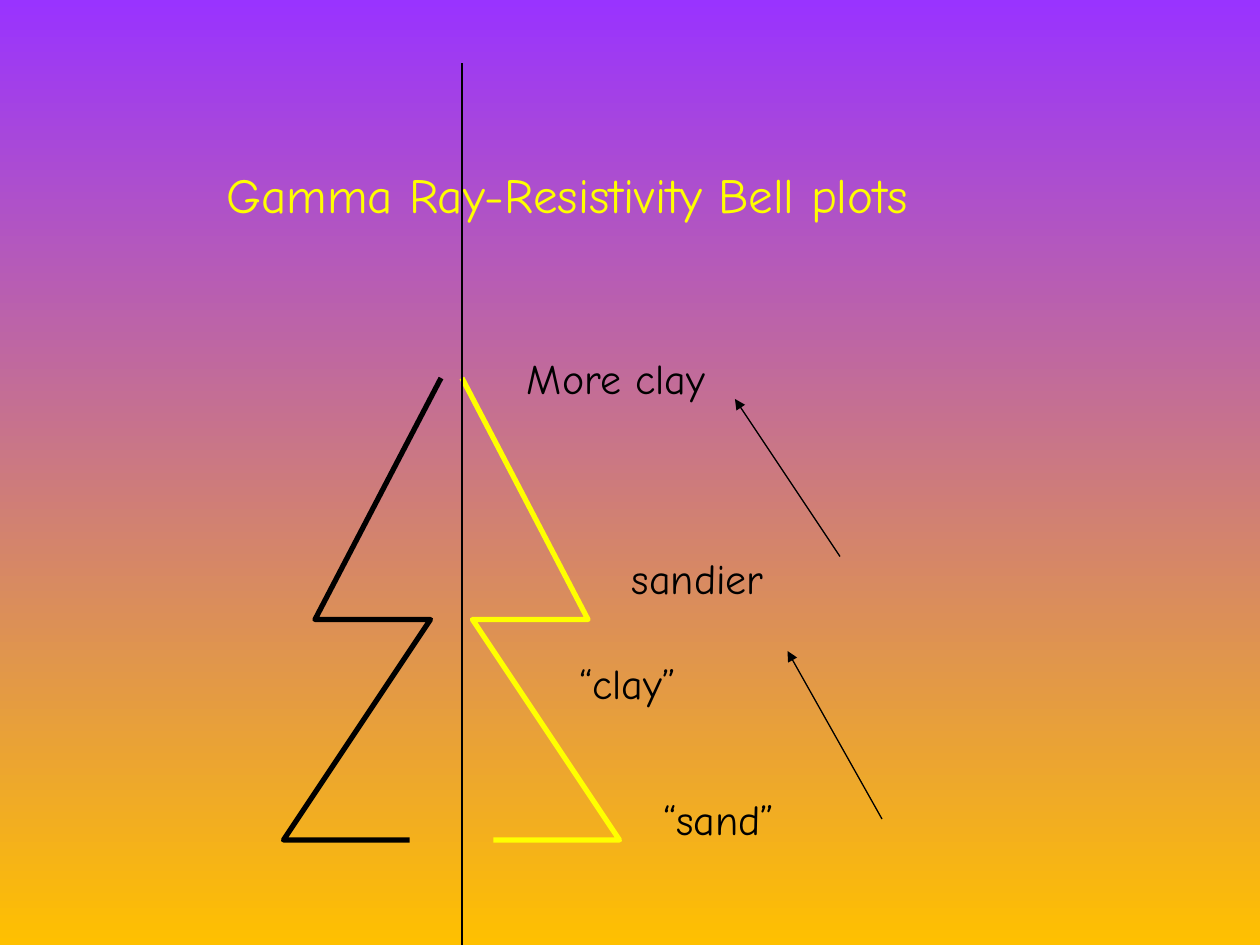
from lxml.etree import SubElement
from pptx import Presentation
from pptx.dml.color import RGBColor
from pptx.enum.shapes import MSO_CONNECTOR
from pptx.enum.text import MSO_ANCHOR, MSO_AUTO_SIZE, PP_ALIGN
from pptx.oxml.ns import qn
from pptx.util import Pt

PURPLE = RGBColor(0x99, 0x33, 0xFF)
AMBER = RGBColor(0xFF, 0xC0, 0x00)
YELLOW = RGBColor(0xFF, 0xFF, 0x00)
BLACK = RGBColor(0x00, 0x00, 0x00)

FONT_NAME = "Comic Neue"
TITLE_FONT = {"name": FONT_NAME, "size": Pt(28)}
LABEL_FONT = {"name": FONT_NAME, "size": Pt(24)}
TITLE_FRAME = {"word_wrap": True, "vertical_anchor": MSO_ANCHOR.MIDDLE}
LABEL_FRAME = {"word_wrap": True, "auto_size": MSO_AUTO_SIZE.SHAPE_TO_FIT_TEXT}

RESISTIVITY_CURVE = [(264, 216), (336, 354), (270, 354), (354, 480), (282, 480)]
MIRROR_X = 258
LABELS = [
    ("More clay", 294, 198, 156),
    ("sandier", 354, 312, 132),
    ("“clay”", 324, 372, 108),
    ("“sand”", 372, 450, 132),
]
TREND_ARROWS = [((480, 318), (420, 228)), ((504, 468), (450, 372))]
AXIS = ((264, 36), (264, 540))


def set_attributes(target, values):
    for name, value in values.items():
        setattr(target, name, value)


def paint_background(slide):
    fill = slide.background.fill
    fill.gradient()
    fill.gradient_angle = 270
    for stop, color, position in zip(fill.gradient_stops, (PURPLE, AMBER), (0, 1)):
        stop.color.rgb = color
        stop.position = position


def add_text(slide, text, box, frame_format, font_format, color, alignment):
    shape = slide.shapes.add_textbox(*map(Pt, box))
    set_attributes(shape.text_frame, frame_format)
    paragraph = shape.text_frame.paragraphs[0]
    paragraph.text = text
    paragraph.alignment = alignment
    set_attributes(paragraph.font, font_format)
    paragraph.font.color.rgb = color


def add_curve(slide, points, color):
    start, *others = [(Pt(x), Pt(y)) for x, y in points]
    builder = slide.shapes.build_freeform(*start)
    builder.add_line_segments(others, close=False)
    shape = builder.convert_to_shape()
    shape.shadow.inherit = False
    shape.fill.background()
    shape.line.color.rgb = color
    shape.line.width = Pt(3)
    SubElement(shape.line._get_or_add_ln(), qn("a:round"))


def add_line(slide, start, end, arrow=False):
    connector = slide.shapes.add_connector(
        MSO_CONNECTOR.STRAIGHT, *map(Pt, start + end))
    connector.line.color.rgb = BLACK
    connector.line.width = Pt(0.75)
    if arrow:
        SubElement(connector.line._get_or_add_ln(), qn("a:tailEnd"), type="triangle")
    SubElement(connector._element.spPr, qn("a:effectLst"))


def main():
    presentation = Presentation()
    presentation.slide_width = Pt(720)
    presentation.slide_height = Pt(540)
    slide = presentation.slides.add_slide(presentation.slide_layouts[6])
    paint_background(slide)

    add_text(slide, "Gamma Ray-Resistivity Bell plots", (48, 72, 552, 78),
             TITLE_FRAME, TITLE_FONT, YELLOW, PP_ALIGN.CENTER)

    gamma_ray_curve = [(2 * MIRROR_X - x, y) for x, y in RESISTIVITY_CURVE]
    add_curve(slide, RESISTIVITY_CURVE, YELLOW)
    add_curve(slide, gamma_ray_curve, BLACK)

    for text, left, top, width in LABELS:
        add_text(slide, text, (left, top, width, 36),
                 LABEL_FRAME, LABEL_FONT, BLACK, PP_ALIGN.LEFT)

    for start, end in TREND_ARROWS:
        add_line(slide, start, end, arrow=True)
    add_line(slide, *AXIS)

    presentation.save("out.pptx")


if __name__ == "__main__":
    main()
